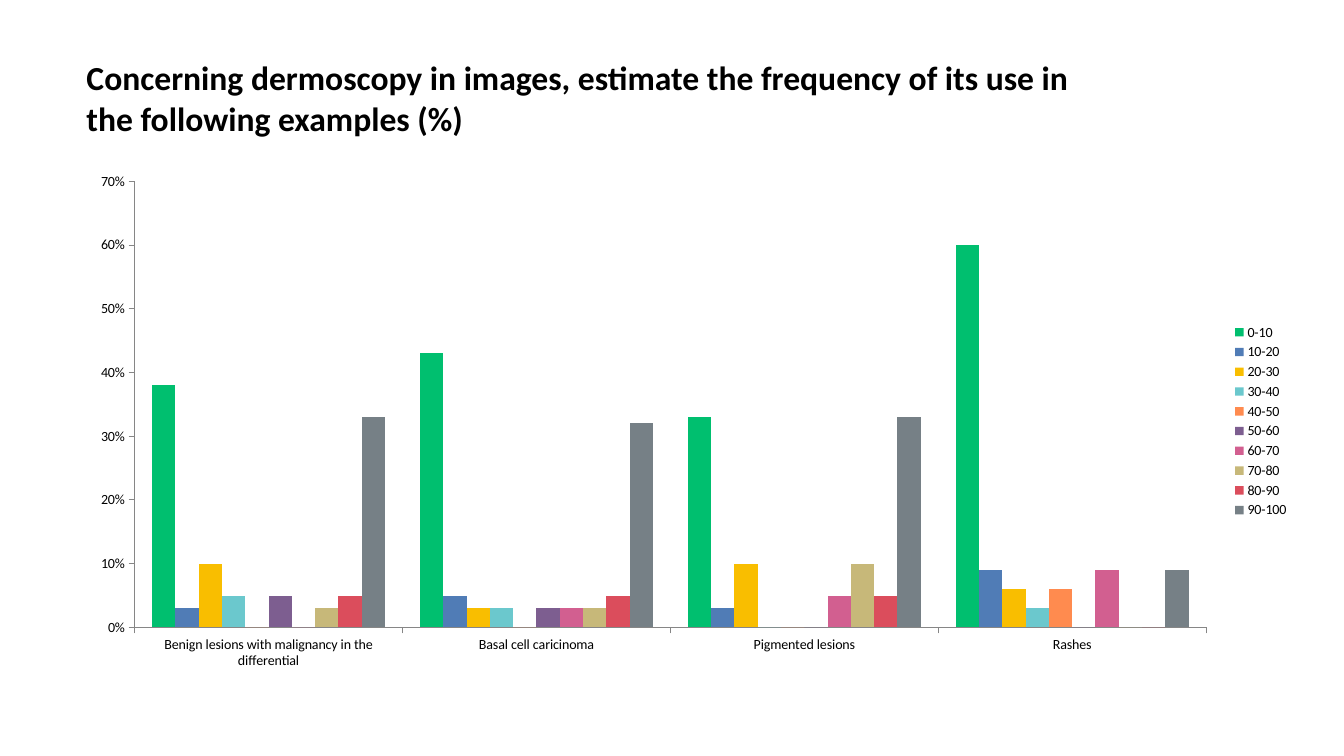
from dataclasses import dataclass

import pptx
import pptx.chart.data
import pptx.dml.color
import pptx.enum.chart
import pptx.enum.text
import pptx.util

Pt = pptx.util.Pt
FONT = "Calibri"
COLOURS = {
    "text": "000000",
    "axis": "868686",
    "green": "00BF6F",
    "blue": "507CB6",
    "yellow": "F9BE00",
    "aqua": "6BC8CD",
    "orange": "FF8B4F",
    "purple": "7D5E90",
    "pink": "D25F90",
    "sand": "C7B879",
    "red": "DB4D5C",
    "grey": "768086",
}


@dataclass(frozen=True)
class FrequencyBand:
    name: str
    colour: str
    shares: tuple[float, ...]


EXAMPLES = (
    "Benign lesions with malignancy in the differential",
    "Basal cell caricinoma",
    "Pigmented lesions",
    "Rashes",
)
BANDS = (
    FrequencyBand("0-10", "green", (0.38, 0.43, 0.33, 0.6)),
    FrequencyBand("10-20", "blue", (0.03, 0.05, 0.03, 0.09)),
    FrequencyBand("20-30", "yellow", (0.1, 0.03, 0.1, 0.06)),
    FrequencyBand("30-40", "aqua", (0.05, 0.03, 0, 0.03)),
    FrequencyBand("40-50", "orange", (0, 0, 0, 0.06)),
    FrequencyBand("50-60", "purple", (0.05, 0.03, 0, 0)),
    FrequencyBand("60-70", "pink", (0, 0.03, 0.05, 0.09)),
    FrequencyBand("70-80", "sand", (0.03, 0.03, 0.1, 0)),
    FrequencyBand("80-90", "red", (0.05, 0.05, 0.05, 0)),
    FrequencyBand("90-100", "grey", (0.33, 0.32, 0.33, 0.09)),
)


def colour(name: str) -> pptx.dml.color.RGBColor:
    return pptx.dml.color.RGBColor.from_string(COLOURS[name])


def style_font(font, size: float, bold: bool = False) -> None:
    font.name = FONT
    font.size = Pt(size)
    font.bold = bold
    font.color.rgb = colour("text")


def add_text(page, text: str, *, left: float, top: float, width: float,
             height: float, size: float, bold: bool = False) -> None:
    box = page.shapes.add_textbox(Pt(left), Pt(top), Pt(width), Pt(height))
    box.text_frame.word_wrap = True
    box.text_frame.auto_size = pptx.enum.text.MSO_AUTO_SIZE.SHAPE_TO_FIT_TEXT
    span = box.text_frame.paragraphs[0].add_run()
    span.text = text
    style_font(span.font, size, bold)


def style_axis(axis) -> None:
    axis.has_major_gridlines = False
    axis.major_tick_mark = pptx.enum.chart.XL_TICK_MARK.OUTSIDE
    axis.minor_tick_mark = pptx.enum.chart.XL_TICK_MARK.NONE
    axis.format.line.color.rgb = colour("axis")
    axis.format.line.width = Pt(0.75)


def add_frequency_chart(page, *, left: float, top: float, width: float,
                        height: float) -> None:
    table = pptx.chart.data.CategoryChartData(number_format="0%")
    table.categories = EXAMPLES
    for band in BANDS:
        table.add_series(band.name, band.shares)
    chart = page.shapes.add_chart(
        pptx.enum.chart.XL_CHART_TYPE.COLUMN_CLUSTERED,
        Pt(left), Pt(top), Pt(width), Pt(height), table,
    ).chart
    style_font(chart.font, 10)
    chart.has_title = False
    chart.has_legend = True
    chart.legend.position = pptx.enum.chart.XL_LEGEND_POSITION.RIGHT
    chart.legend.include_in_layout = False

    style_axis(chart.category_axis)
    style_axis(chart.value_axis)
    chart.value_axis.minimum_scale = 0
    chart.value_axis.maximum_scale = 0.7
    chart.value_axis.major_unit = 0.1
    chart.value_axis.tick_labels.number_format = "0%"
    chart.value_axis.tick_labels.number_format_is_linked = False

    plot = chart.plots[0]
    plot.vary_by_categories = False
    plot.gap_width = 150
    plot.overlap = 0
    for band, columns in zip(BANDS, plot.series):
        columns.format.fill.solid()
        columns.format.fill.fore_color.rgb = colour(band.colour)


def main() -> None:
    deck = pptx.Presentation()
    deck.slide_width, deck.slide_height = Pt(960), Pt(540)
    page = deck.slides.add_slide(deck.slide_layouts[6])
    add_frequency_chart(page, left=54.7, top=116.6, width=873.4, height=368.6)
    add_text(
        page,
        "Concerning dermoscopy in images, estimate the frequency of its use "
        "in the following examples (%)",
        left=54.7, top=37.4, width=748, height=65.5, size=24, bold=True,
    )
    deck.save("out.pptx")


if __name__ == "__main__":
    main()
